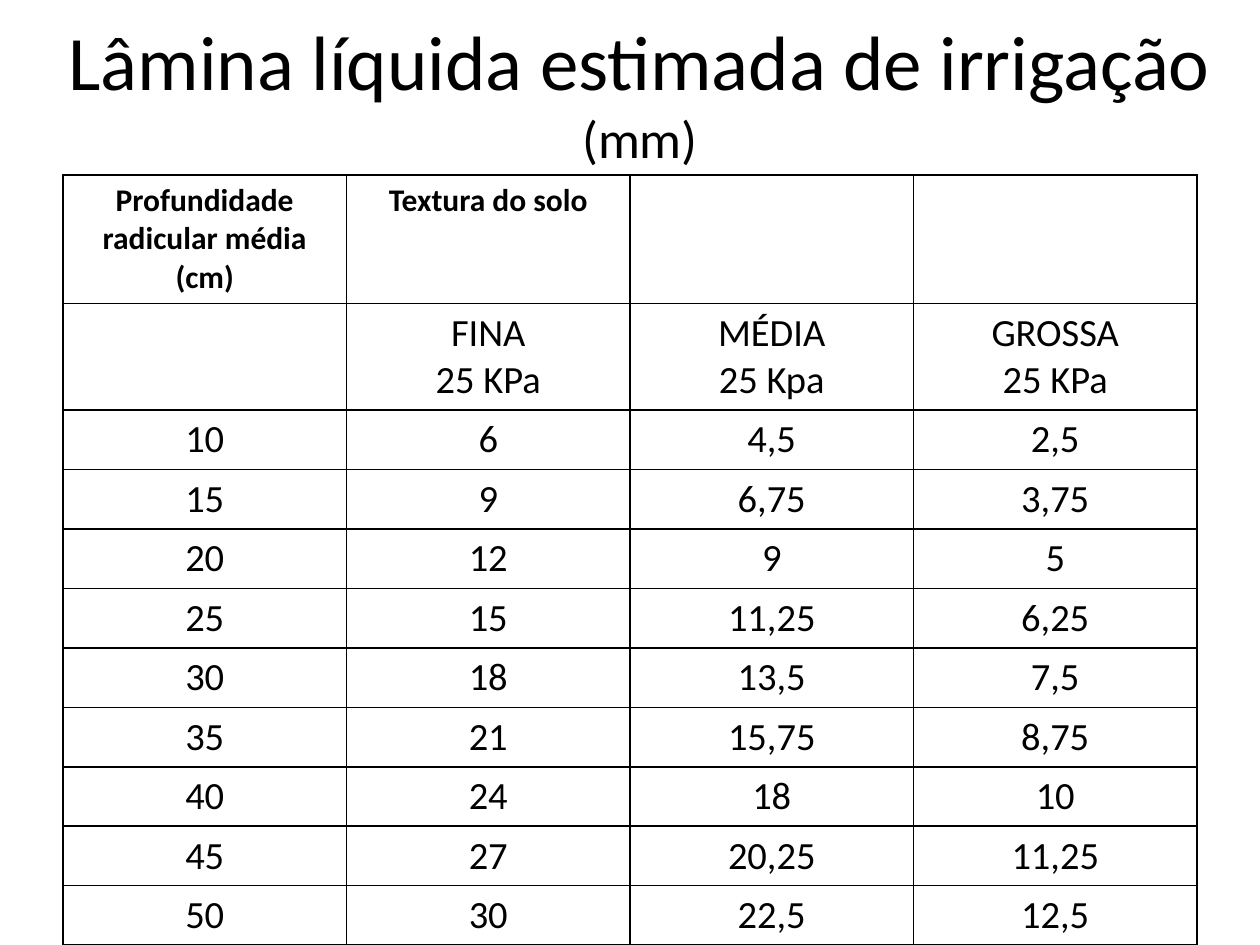
from lxml.etree import SubElement
from pptx import Presentation
from pptx.dml.color import RGBColor
from pptx.enum.text import MSO_ANCHOR, MSO_AUTO_SIZE, PP_ALIGN
from pptx.oxml.ns import qn
from pptx.util import Pt

FONT = "Calibri"
BLACK = "000000"
COL_W = 162
ROW_HEIGHTS = [73.5, 60.5] + [34] * 9
HEADERS = [
    ["Profundidade radicular média (cm)", "Textura do solo", "", ""],
    ["", "FINA\n25 KPa", "MÉDIA\n25 Kpa", "GROSSA\n25 KPa"],
]
DEPTHS = [
    ["10", "6", "4,5", "2,5"],
    ["15", "9", "6,75", "3,75"],
    ["20", "12", "9", "5"],
    ["25", "15", "11,25", "6,25"],
    ["30", "18", "13,5", "7,5"],
    ["35", "21", "15,75", "8,75"],
    ["40", "24", "18", "10"],
    ["45", "27", "20,25", "11,25"],
    ["50", "30", "22,5", "12,5"],
]


def rgb(color):
    return RGBColor.from_string(color)


def style_run(r, size, bold=False):
    r.font.name = FONT
    r.font.size = Pt(size)
    r.font.bold = bold
    r.font.color.rgb = rgb(BLACK)


def add_title(slide, x, y, w, h):
    sp = slide.shapes.title
    sp.left, sp.top, sp.width, sp.height = Pt(x), Pt(y), Pt(w), Pt(h)
    tf = sp.text_frame
    tf.word_wrap = True
    tf.auto_size = MSO_AUTO_SIZE.NONE
    tf.vertical_anchor = MSO_ANCHOR.MIDDLE
    p = tf.paragraphs[0]
    p.alignment = PP_ALIGN.CENTER
    for text, size in [("Lâmina líquida estimada de irrigação ", 44), ("(mm)", 30)]:
        r = p.add_run()
        r.text = text
        style_run(r, size)


def set_borders(cell, width, color):
    tc_pr = cell._tc.get_or_add_tcPr()
    for side in ("a:lnL", "a:lnR", "a:lnT", "a:lnB"):
        ln = SubElement(tc_pr, qn(side), w=str(Pt(width)))
        fill = SubElement(ln, qn("a:solidFill"))
        SubElement(fill, qn("a:srgbClr"), val=color)


def fill_cell(cell, text, size, bold):
    # Borders precede the fill in the cell properties
    set_borders(cell, 1, BLACK)
    cell.fill.background()
    cell.text_frame.text = text
    for p in cell.text_frame.paragraphs:
        p.alignment = PP_ALIGN.CENTER
        for r in p.runs:
            style_run(r, size, bold)


def add_depth_table(slide, x, y):
    rows = HEADERS + DEPTHS
    cols = len(rows[0])
    table = slide.shapes.add_table(
        len(rows), cols, Pt(x), Pt(y), Pt(COL_W * cols), Pt(sum(ROW_HEIGHTS))
    ).table
    table.first_row = table.horz_banding = False
    for column in table.columns:
        column.width = Pt(COL_W)
    for i, (texts, height) in enumerate(zip(rows, ROW_HEIGHTS)):
        table.rows[i].height = Pt(height)
        for j, text in enumerate(texts):
            fill_cell(table.cell(i, j), text, 18 if i == 0 else 22, i == 0)


def main():
    prs = Presentation()
    prs.slide_width, prs.slide_height = Pt(720), Pt(540)
    slide = prs.slides.add_slide(prs.slide_layouts[5])  # Title Only
    add_title(slide, 5.75, 7.2, 720, 90)
    add_depth_table(slide, 36, 100)
    prs.save("out.pptx")


if __name__ == "__main__":
    main()
